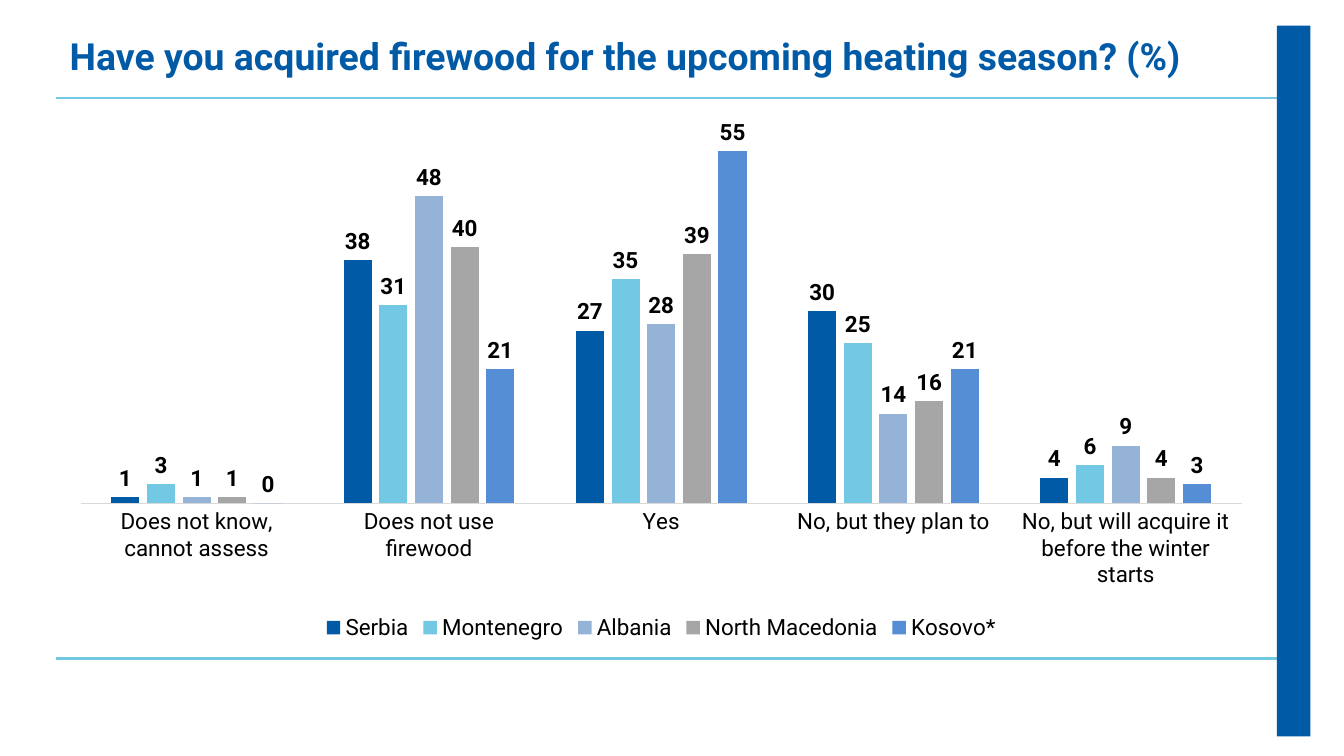
from dataclasses import dataclass

from lxml import etree
from pptx import Presentation
from pptx.chart.data import CategoryChartData
from pptx.dml.color import RGBColor
from pptx.enum.chart import XL_CHART_TYPE, XL_LABEL_POSITION, XL_LEGEND_POSITION, XL_TICK_MARK
from pptx.enum.shapes import MSO_CONNECTOR, MSO_SHAPE
from pptx.enum.text import MSO_ANCHOR, PP_ALIGN
from pptx.oxml.ns import qn
from pptx.util import Inches, Pt

COLUMNS = XL_CHART_TYPE.COLUMN_CLUSTERED
OUTSIDE_END = XL_LABEL_POSITION.OUTSIDE_END
BOTTOM = XL_LEGEND_POSITION.BOTTOM
NO_TICK = XL_TICK_MARK.NONE
STRAIGHT = MSO_CONNECTOR.STRAIGHT
RECTANGLE = MSO_SHAPE.RECTANGLE
MIDDLE = MSO_ANCHOR.MIDDLE
LEFT = PP_ALIGN.LEFT

SLIDE_WIDTH = Inches(10)
SLIDE_HEIGHT = SLIDE_WIDTH * 9 // 16
MARGIN, CONTENT_WIDTH = 0.42, 9
CATEGORIES = (
    "Does not know, cannot assess",
    "Does not use firewood",
    "Yes",
    "No, but they plan to",
    "No, but will acquire it before the winter starts",
)
ANSWERS = {
    "Serbia": (1, 38, 27, 30, 4),
    "Montenegro": (3, 31, 35, 25, 6),
    "Albania": (1, 48, 28, 14, 9),
    "North Macedonia": (1, 40, 39, 16, 4),
    "Kosovo*": (0, 21, 55, 21, 3),
}


@dataclass(frozen=True)
class Theme:
    """Colours, font and type sizes of the slide."""
    brand: str = "005AA6"
    rule: str = "73C9E4"
    axis: str = "D9D9D9"
    text: str = "000000"
    series: tuple = ("005AA6", "73C9E4", "95B3D7", "A6A6A6", "558ED5")
    font: str = "Roboto"
    title_size: int = 20
    chart_size: int = 12


THEME = Theme()


def paint(fill, color):
    """Give a fill one solid colour."""
    fill.solid()
    fill.fore_color.rgb = RGBColor.from_string(color)


def style_font(font, size, color, bold=False):
    """Set typeface, size, colour and weight."""
    font.name, font.size, font.bold = THEME.font, Pt(size), bold
    font.color.rgb = RGBColor.from_string(color)


def add_frame(slide, left, right, rule_heights, bar_box):
    """Draw the horizontal rules and the side bar over their ends."""
    for height in rule_heights:
        rule = slide.shapes.add_connector(
            STRAIGHT, Inches(right), Inches(height), Inches(left), Inches(height))
        rule.line.width = Pt(1.5)
        rule.line.color.rgb = RGBColor.from_string(THEME.rule)
        etree.SubElement(rule._element.spPr, qn("a:effectLst"))
    bar = slide.shapes.add_shape(RECTANGLE, *map(Inches, bar_box))
    bar.shadow.inherit = False
    paint(bar.fill, THEME.brand)
    bar.line.fill.background()


def add_title(slide, box, text):
    """Write the question heading in its box."""
    frame = slide.shapes.add_textbox(*map(Inches, box)).text_frame
    frame.word_wrap = True
    frame.vertical_anchor = MIDDLE
    frame.margin_top = frame.margin_bottom = 0
    paragraph = frame.paragraphs[0]
    paragraph.text = text
    paragraph.alignment = LEFT
    style_font(paragraph.font, THEME.title_size, THEME.brand, bold=True)


def add_answer_chart(slide, box):
    """Chart the share of each answer by country."""
    data = CategoryChartData()
    data.categories = CATEGORIES
    for country, shares in ANSWERS.items():
        data.add_series(country, shares)
    chart = slide.shapes.add_chart(COLUMNS, *map(Inches, box), data).chart
    style_font(chart.font, THEME.chart_size, THEME.text, bold=True)
    chart.has_title = False
    chart.has_legend = True
    chart.legend.position = BOTTOM
    chart.legend.include_in_layout = False
    style_font(chart.legend.font, THEME.chart_size, THEME.text)

    value_axis, category_axis = chart.value_axis, chart.category_axis
    value_axis.visible = False
    value_axis.has_major_gridlines = False
    value_axis.minimum_scale, value_axis.maximum_scale = 0, 60
    category_axis.major_tick_mark = category_axis.minor_tick_mark = NO_TICK
    category_axis.format.line.width = Pt(0.75)
    category_axis.format.line.color.rgb = RGBColor.from_string(THEME.axis)
    style_font(category_axis.tick_labels.font, THEME.chart_size, THEME.text)

    plot = chart.plots[0]
    plot.gap_width, plot.overlap = 219, -27
    plot.vary_by_categories = False
    for series, color in zip(plot.series, THEME.series):
        paint(series.format.fill, color)
        series.invert_if_negative = False
        labels = series.data_labels
        labels.show_value = True
        labels.position = OUTSIDE_END
        style_font(labels.font, THEME.chart_size, THEME.text, bold=True)


def main():
    """Build the firewood survey slide."""
    presentation = Presentation()
    presentation.slide_width, presentation.slide_height = SLIDE_WIDTH, SLIDE_HEIGHT
    slide = presentation.slides.add_slide(presentation.slide_layouts[6])
    add_frame(slide, MARGIN, 9.71, (0.73, 4.9), (9.5, 0.19, 0.25, 5.29))
    add_title(slide, (MARGIN, 0.23, CONTENT_WIDTH, 0.37),
              "Have you acquired firewood for the upcoming heating season? (%)")
    add_answer_chart(slide, (MARGIN, 0.81, CONTENT_WIDTH, 4))
    presentation.save("out.pptx")


if __name__ == "__main__":
    main()
